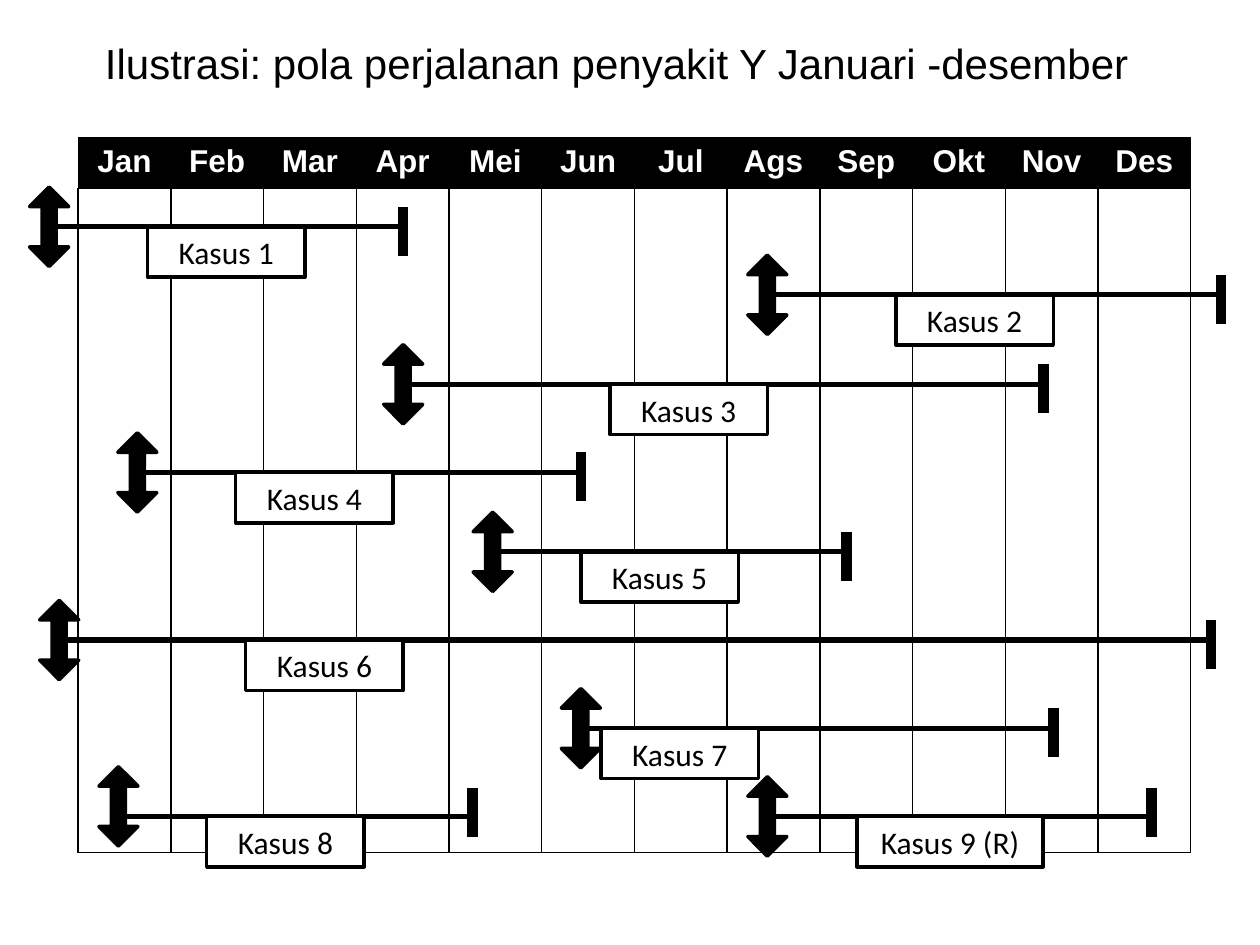
"""Build a slide charting disease cases Y across the months of a year."""
from dataclasses import dataclass

import pptx
import pptx.dml.color
import pptx.enum.shapes
import pptx.enum.text
import pptx.oxml
import pptx.oxml.ns
import pptx.util

Inches = pptx.util.Inches
Pt = pptx.util.Pt
SHAPES = pptx.enum.shapes.MSO_SHAPE
CENTER = pptx.enum.text.PP_ALIGN.CENTER
MIDDLE = pptx.enum.text.MSO_ANCHOR.MIDDLE

BLACK = pptx.dml.color.RGBColor(0x00, 0x00, 0x00)
WHITE = pptx.dml.color.RGBColor(0xFF, 0xFF, 0xFF)

MONTHS = ("Jan", "Feb", "Mar", "Apr", "Mei", "Jun",
          "Jul", "Ags", "Sep", "Okt", "Nov", "Des")
ROWS = 14
GRID_WIDTH, GRID_HEIGHT = 8.83, 5.68
ARROW_WIDTH, ARROW_HEIGHT = 0.31, 0.63
LABEL_HEIGHT = 0.4


@dataclass(frozen=True)
class Case:
    """One case: onset, end and height of its course, and its label."""
    name: str
    onset: float
    end: float
    y: float
    label_left: float
    label_width: float = 1.25
    tick_above: float = 0.16
    tick_below: float = 0.23
    arrow_shift: float = 0


CASES = (
    Case("Kasus 1", 0.39, 3.2, 1.8, 1.17),
    Case("Kasus 2", 6.09, 9.69, 2.34, 7.11),
    Case("Kasus 3", 3.2, 8.28, 3.05, 4.84),
    Case("Kasus 4", 1.09, 4.61, 3.75, 1.87),
    Case("Kasus 5", 3.91, 6.72, 4.38, 4.61),
    Case("Kasus 6", 0.47, 9.61, 5.08, 1.95),
    Case("Kasus 7", 4.61, 8.36, 5.78, 4.77),
    Case("Kasus 8", 0.94, 3.75, 6.48, 1.64,
         tick_above=0.23, tick_below=0.16, arrow_shift=-0.08),
    Case("Kasus 9 (R)", 6.09, 9.14, 6.48, 6.8, 1.48,
         tick_above=0.23, tick_below=0.16),
)


def style_text(frame, text: str, size: float, font: str, color, bold: bool = False) -> None:
    """Write one centred paragraph."""
    frame.text = text
    paragraph = frame.paragraphs[0]
    paragraph.alignment = CENTER
    run_font = paragraph.runs[0].font
    run_font.size = Pt(size)
    run_font.name = font
    run_font.color.rgb = color
    run_font.bold = bold


def set_borders(cell, widths: dict) -> None:
    """Give the cell black borders of the given widths and clear the others."""
    properties = cell._tc.get_or_add_tcPr()
    namespace = pptx.oxml.ns.nsdecls("a")
    for index, side in enumerate(("L", "R", "T", "B")):
        width = widths.get(side, 0)
        paint = f'<a:solidFill><a:srgbClr val="{BLACK}"/></a:solidFill>' if width else "<a:noFill/>"
        properties.insert(index, pptx.oxml.parse_xml(
            f'<a:ln{side} {namespace} w="{int(Pt(width))}">{paint}</a:ln{side}>'))


def border_widths(row: int, column: int) -> dict:
    """Return the border widths of a calendar cell."""
    if row == 0:
        widths = {"T": 0.75, "B": 1}
        if column == 0:
            widths["L"] = 0.75
        if column == len(MONTHS) - 1:
            widths["R"] = 0.75
        return widths
    widths = {"L": 1, "R": 1}
    if row == 1:
        widths["T"] = 1
    if row == ROWS - 1:
        widths["B"] = 1
    return widths


def add_calendar(slide) -> None:
    """Draw the table of months."""
    calendar = slide.shapes.add_table(
        ROWS, len(MONTHS), Inches(0.62), Inches(1.09),
        Inches(GRID_WIDTH), Inches(GRID_HEIGHT)).table
    calendar.first_row = False
    calendar.horz_banding = False
    for row in range(ROWS):
        for column, month in enumerate(MONTHS):
            cell = calendar.cell(row, column)
            if row == 0:
                cell.fill.solid()
                cell.fill.fore_color.rgb = BLACK
                style_text(cell.text_frame, month, 18, "Arial", WHITE, True)
            else:
                cell.fill.background()
            set_borders(cell, border_widths(row, column))


def add_line(slide, x1: float, y1: float, x2: float, y2: float, width: float) -> None:
    """Draw a straight black line."""
    line = slide.shapes.add_connector(
        pptx.enum.shapes.MSO_CONNECTOR.STRAIGHT,
        Inches(x1), Inches(y1), Inches(x2), Inches(y2))
    line.line.color.rgb = BLACK
    line.line.width = Pt(width)
    line._element.spPr.append(pptx.oxml.parse_xml(
        f'<a:effectLst {pptx.oxml.ns.nsdecls("a")}/>'))


def add_block(slide, kind, left: float, top: float, width: float, height: float, fill):
    """Draw a filled shape with a black outline."""
    block = slide.shapes.add_shape(
        kind, Inches(left), Inches(top), Inches(width), Inches(height))
    block.shadow.inherit = False
    block.fill.solid()
    block.fill.fore_color.rgb = fill
    block.line.color.rgb = BLACK
    block.line.width = Pt(2)
    return block


def add_course(slide, case: Case) -> None:
    """Draw the line of a case from onset to end."""
    add_line(slide, case.onset, case.y, case.end, case.y, 3)


def add_end_tick(slide, case: Case) -> None:
    """Draw the upright bar that closes a case."""
    add_line(slide, case.end, case.y + case.tick_below, case.end, case.y - case.tick_above, 6)


def add_onset_arrow(slide, case: Case) -> None:
    """Draw the double arrow at the onset of a case."""
    arrow = add_block(
        slide, SHAPES.UP_DOWN_ARROW, case.onset - ARROW_WIDTH / 2,
        case.y + case.arrow_shift - ARROW_HEIGHT / 2, ARROW_WIDTH, ARROW_HEIGHT, BLACK)
    arrow.adjustments[0] = 0.18
    arrow.adjustments[1] = 0.36


def add_label(slide, case: Case) -> None:
    """Draw the name box of a case below its line."""
    label = add_block(slide, SHAPES.RECTANGLE, case.label_left, case.y,
                      case.label_width, LABEL_HEIGHT, WHITE)
    style_text(label.text_frame, case.name, 18, "Calibri", BLACK)
    label.text_frame.auto_size = pptx.enum.text.MSO_AUTO_SIZE.SHAPE_TO_FIT_TEXT


def add_title(slide) -> None:
    """Write the slide title."""
    title = slide.shapes.add_textbox(Inches(0.47), Inches(0), Inches(9), Inches(0.78)).text_frame
    title.word_wrap = True
    title.vertical_anchor = MIDDLE
    title.margin_top = Inches(0.27)
    title.margin_right = Inches(0.25)
    style_text(title, "Ilustrasi: pola perjalanan penyakit Y Januari -desember", 24, "Arial", BLACK)


def main() -> None:
    """Build and save the slide."""
    deck = pptx.Presentation()
    deck.slide_width = Inches(10)
    deck.slide_height = Inches(7.5)
    slide = deck.slides.add_slide(deck.slide_layouts[6])
    add_title(slide)
    add_calendar(slide)
    for draw in (add_course, add_end_tick, add_onset_arrow, add_label):
        for case in CASES:
            draw(slide, case)
    deck.save("out.pptx")


if __name__ == "__main__":
    main()
